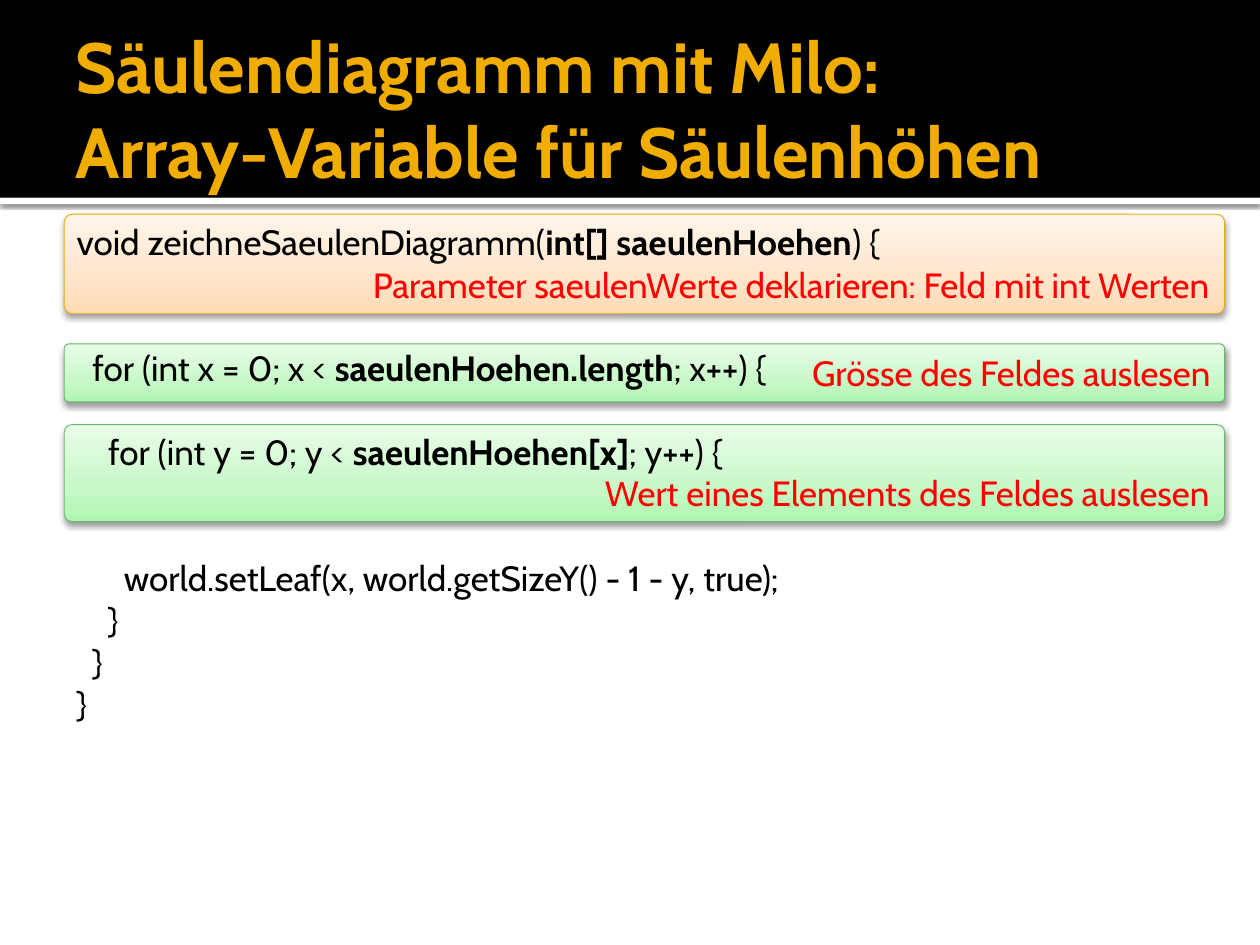
from pptx import Presentation
from pptx.dml.color import RGBColor
from pptx.enum.shapes import MSO_SHAPE
from pptx.enum.text import MSO_ANCHOR, PP_ALIGN
from pptx.oxml import parse_xml
from pptx.oxml.ns import nsdecls, qn
from pptx.util import Inches, Pt

BLACK = RGBColor(0x00, 0x00, 0x00)
WHITE = RGBColor(0xFF, 0xFF, 0xFF)
GOLD = RGBColor(0xF0, 0xAD, 0x00)
RED = RGBColor(0xFF, 0x00, 0x00)
AMBER = RGBColor(0xEB, 0xA9, 0x00)
LEAF = RGBColor(0x67, 0xB5, 0x69)
PEACH = [(0, RGBColor(0xFF, 0xDB, 0xB5)), (35, RGBColor(0xFF, 0xE5, 0xCB)),
         (100, RGBColor(0xFF, 0xF5, 0xEB))]
MINT = [(0, RGBColor(0xB0, 0xF6, 0xB1)), (35, RGBColor(0xC8, 0xF8, 0xC8)),
        (100, RGBColor(0xE9, 0xFD, 0xE9))]

FONT = "Cabin"
LINE = 24
STEP = 0.125

TITLE = {"name": FONT, "size": Pt(40.5), "bold": True}
CODE = {"name": FONT, "size": Pt(20), "bold": False}
STRONG = CODE | {"bold": True}

NOTES = [
    (3.37, 0.77, MINT, LEAF, MSO_ANCHOR.BOTTOM,
     "Wert eines Elements des Feldes auslesen"),
    (2.73, 0.46, MINT, LEAF, MSO_ANCHOR.MIDDLE,
     "Grösse des Feldes auslesen"),
    (1.7, 0.79, PEACH, AMBER, MSO_ANCHOR.BOTTOM,
     "Parameter saeulenWerte deklarieren: Feld mit int Werten"),
]

ROWS = [
    (0, 0, ["void zeichneSaeulenDiagramm(", "int[] saeulenHoehen", ") {"]),
    (2, 1, ["for (int x = 0; x < ", "saeulenHoehen.length", "; x++) {"]),
    (1, 2, ["for (int y = 0; y < ", "saeulenHoehen[x]", "; y++) {"]),
    (2, 3, ["world.setLeaf(x, world.getSizeY() - 1 - y, true);"]),
    (0, 2, ["}"]),
    (0, 1, ["}"]),
    (0, 0, ["}"]),
]


def add_run(para, text, style, color):
    run = para.add_run()
    run.text = text
    for key, value in style.items():
        setattr(run.font, key, value)
    run.font.color.rgb = color


def add_shade(shape, alpha, blur, dist):
    shape.shadow.inherit = False
    effects = shape._element.spPr.find(qn("a:effectLst"))
    effects.append(parse_xml(
        f'<a:outerShdw {nsdecls("a")} blurRad="{Pt(blur)}" dist="{Pt(dist)}" '
        f'dir="5400000" rotWithShape="0"><a:srgbClr val="{BLACK}">'
        f'<a:alpha val="{alpha * 1000}"/></a:srgbClr></a:outerShdw>'))


def add_blend(shape, stops):
    marks = "".join(f'<a:gs pos="{pos * 1000}"><a:srgbClr val="{color}"/></a:gs>'
                    for pos, color in stops)
    shape._element.spPr.find(qn("a:prstGeom")).addnext(parse_xml(
        f'<a:gradFill {nsdecls("a")} rotWithShape="1"><a:gsLst>{marks}</a:gsLst>'
        '<a:lin ang="16200000" scaled="0"/></a:gradFill>'))


def add_band(slide, top, height, color):
    band = slide.shapes.add_shape(
        MSO_SHAPE.RECTANGLE, 0, Inches(top), Inches(10), Inches(height))
    band.shadow.inherit = False
    band.fill.solid()
    band.fill.fore_color.rgb = color
    band.line.fill.background()
    return band


def add_note(slide, top, height, stops, edge, anchor, text):
    note = slide.shapes.add_shape(
        MSO_SHAPE.ROUNDED_RECTANGLE,
        Inches(0.51), Inches(top), Inches(9.21), Inches(height))
    note.adjustments[0] = 0.08
    note.line.color.rgb = edge
    note.line.width = Pt(0.5)
    add_blend(note, stops)
    add_shade(note, 38, 3.5, 2)
    frame = note.text_frame
    frame.vertical_anchor = anchor
    para = frame.paragraphs[0]
    para.alignment = PP_ALIGN.RIGHT
    add_run(para, text, CODE, RED)


def add_frame(slide, left, top, width, height, anchor):
    box = slide.shapes.add_textbox(
        Inches(left), Inches(top), Inches(width), Inches(height))
    frame = box.text_frame
    frame.word_wrap = True
    frame.vertical_anchor = anchor
    return frame


def add_title(slide):
    frame = add_frame(slide, 0.5, 0.17, 9, 1.37, MSO_ANCHOR.MIDDLE)
    frame.margin_right = Inches(0.05)
    para = frame.paragraphs[0]
    add_run(para, "Säulendiagramm mit Milo:", TITLE, GOLD)
    para.add_line_break()
    add_run(para, "Array-Variable für Säulenhöhen", TITLE, GOLD)


def add_code(slide):
    frame = add_frame(slide, 0.51, 1.7, 6.85, 4.14, MSO_ANCHOR.TOP)
    for row, (gap, level, parts) in enumerate(ROWS):
        para = frame.add_paragraph() if row else frame.paragraphs[0]
        para.space_before = Pt(gap * LINE)
        para._p.get_or_add_pPr().set("marL", str(Inches(level * STEP)))
        for part, text in enumerate(parts):
            add_run(para, text, STRONG if part == 1 else CODE, BLACK)


def main():
    deck = Presentation()
    deck.slide_width, deck.slide_height = Inches(10), Inches(7.5)
    slide = deck.slides.add_slide(deck.slide_layouts[6])
    add_shade(add_band(slide, 1.57, 0.05, WHITE), 60, 2.5, 0.8)
    add_band(slide, 0, 1.57, BLACK)
    for note in NOTES:
        add_note(slide, *note)
    add_title(slide)
    add_code(slide)
    deck.save("out.pptx")


if __name__ == "__main__":
    main()
